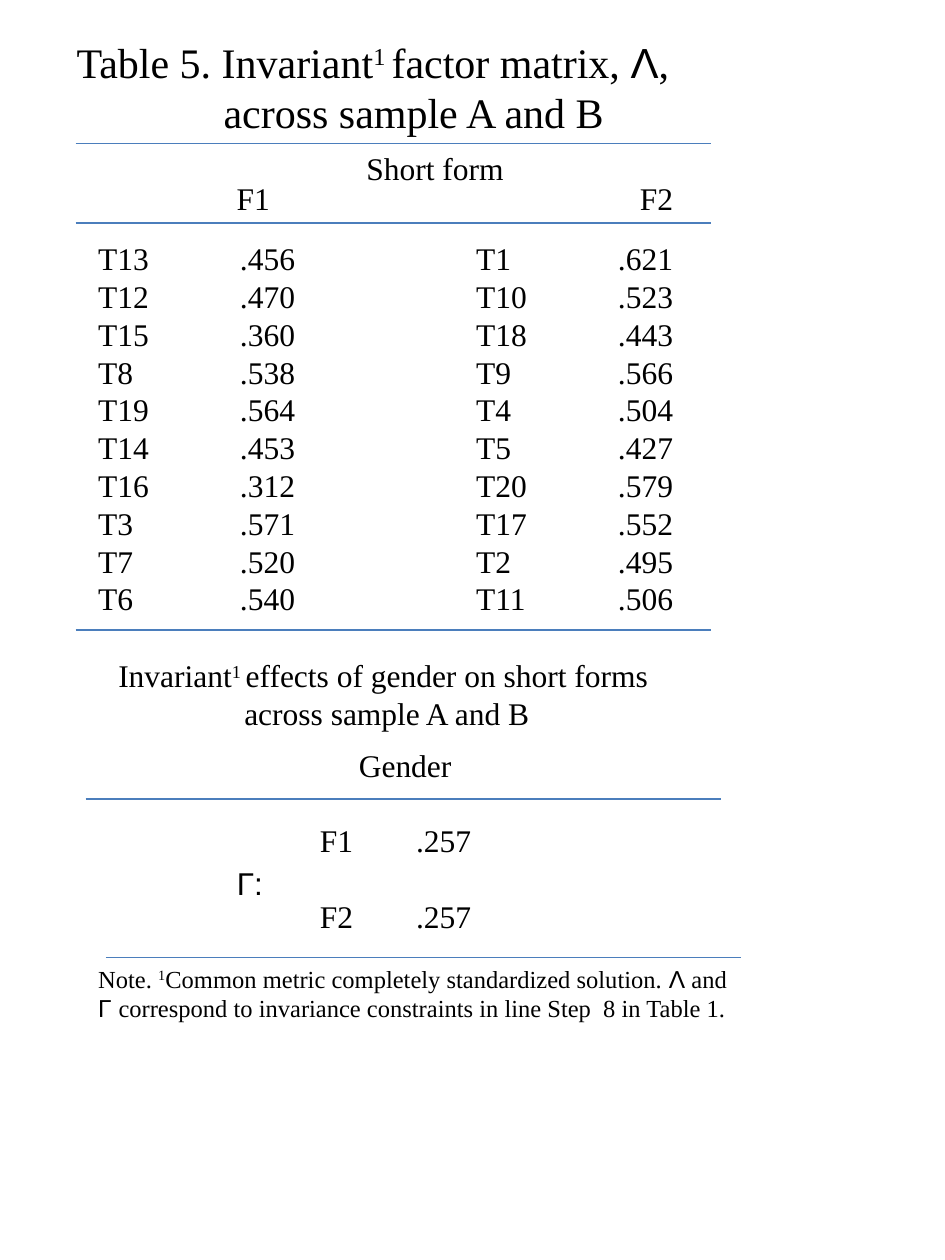
import pptx
import pptx.dml.color
import pptx.enum.shapes
import pptx.enum.text
import pptx.oxml.ns
import pptx.util
from dataclasses import dataclass
from lxml import etree

Pt = pptx.util.Pt
qn = pptx.oxml.ns.qn
rgb = pptx.dml.color.RGBColor.from_string


@dataclass
class Theme:
    ink: str = "000000"
    rule: str = "4B7EBC"
    serif: str = "Times New Roman"
    greek: str = "Arial"
    title: int = 24
    body: int = 18
    note: int = 14
    weight: float = 0.75


class Page:
    def __init__(self, deck, theme):
        self.theme = theme
        self.slide = deck.slides.add_slide(deck.slide_layouts[6])

    def rule(self, x, y, width):
        line = self.slide.shapes.add_connector(
            pptx.enum.shapes.MSO_CONNECTOR.STRAIGHT,
            Pt(x), Pt(y), Pt(x + width), Pt(y))
        line.line.color.rgb = rgb(self.theme.rule)
        line.line.width = Pt(self.theme.weight)
        etree.SubElement(line._element.spPr, qn("a:effectLst"))

    def text(self, x, y, width, height, paras, size, stops=(), gap=0,
             wrap=True):
        """Each paragraph is a list of runs: a string, or (string, kind)."""
        box = self.slide.shapes.add_textbox(Pt(x), Pt(y), Pt(width), Pt(height))
        frame = box.text_frame
        frame.word_wrap = wrap
        frame.auto_size = pptx.enum.text.MSO_AUTO_SIZE.NONE
        for i, runs in enumerate(paras):
            para = frame.add_paragraph() if i else frame.paragraphs[0]
            if i and gap:
                para.space_before = Pt(gap)
            if stops:
                self.tabs(para, stops)
            for part in runs:
                words, kind = (part, "") if isinstance(part, str) else part
                self.run(para, words, kind, size)

    def tabs(self, para, stops):
        tabs = etree.SubElement(para._p.get_or_add_pPr(), qn("a:tabLst"))
        for stop in stops:
            etree.SubElement(tabs, qn("a:tab"), pos=str(Pt(stop)), algn="l")

    def run(self, para, words, kind, size):
        run = para.add_run()
        run.text = words
        font = run.font
        font.size = Pt(size)
        font.name = self.theme.greek if kind == "greek" else self.theme.serif
        font.color.rgb = rgb(self.theme.ink)
        if kind == "super":
            run._r.get_or_add_rPr().set("baseline", "30000")


LOADS = [
    ("T13", ".456", "T1", ".621"),
    ("T12", ".470", "T10", ".523"),
    ("T15", ".360", "T18", ".443"),
    ("T8", ".538", "T9", ".566"),
    ("T19", ".564", "T4", ".504"),
    ("T14", ".453", "T5", ".427"),
    ("T16", ".312", "T20", ".579"),
    ("T3", ".571", "T17", ".552"),
    ("T7", ".520", "T2", ".495"),
    ("T6", ".540", "T11", ".506"),
]


def main():
    deck = pptx.Presentation()
    deck.slide_width, deck.slide_height = Pt(540), Pt(720)
    theme = Theme()
    page = Page(deck, theme)

    # Title
    page.text(36.7, 17.3, 364.3, 65.5, [
        ["Table 5. Invariant", ("1 ", "super"), "factor matrix, ",
         ("Λ", "greek"), ","],
        ["\tacross sample A and B"],
    ], theme.title, stops=[84])

    # Column heads
    page.text(202.3, 81.4, 94.3, 28.8, [["Short form"]], theme.body, wrap=False)
    page.text(128.2, 98.6, 266.4, 28.8, [["F1\tF2"]], theme.body, stops=[230.4])

    # Factor loadings
    page.text(49, 133.2, 385.2, 247, [["\t".join(row)] for row in LOADS],
              theme.body, stops=[81, 216, 297])

    # Gender effects
    page.text(60.5, 371.5, 330.5, 51.1, [
        ["Invariant", ("1 ", "super"), "effects of gender on short forms"],
        ["\tacross sample A and B"],
    ], theme.body, stops=[72])
    page.text(31.7, 422.6, 329, 138.2,
              [["\tGender"]], theme.body, stops=[166.3])
    page.text(31.7, 465.8, 329, 95,
              [["\tF1\t.257"], ["\tF2\t.257"]],
              theme.body, stops=[144, 199], gap=21.6)
    page.text(128.2, 490.3, 30.2, 28.8, [[("Γ:", "greek")]], theme.body,
              wrap=False)

    # Note
    page.text(49, 547.2, 380.2, 41, [
        ["Note. ", ("1", "super"),
         "Common metric completely standardized solution. ",
         ("Λ", "greek"), " and"],
        [("Γ ", "greek"),
         "correspond to invariance constraints in line Step  8 in Table 1."],
    ], theme.note, wrap=False)

    # Rules, all of one width
    for x, y in [(43.2, 82.1), (43.2, 127.4), (43.2, 360),
                 (49, 456.5), (60.5, 547.2)]:
        page.rule(x, y, 362.9)

    deck.save("out.pptx")


if __name__ == "__main__":
    main()
